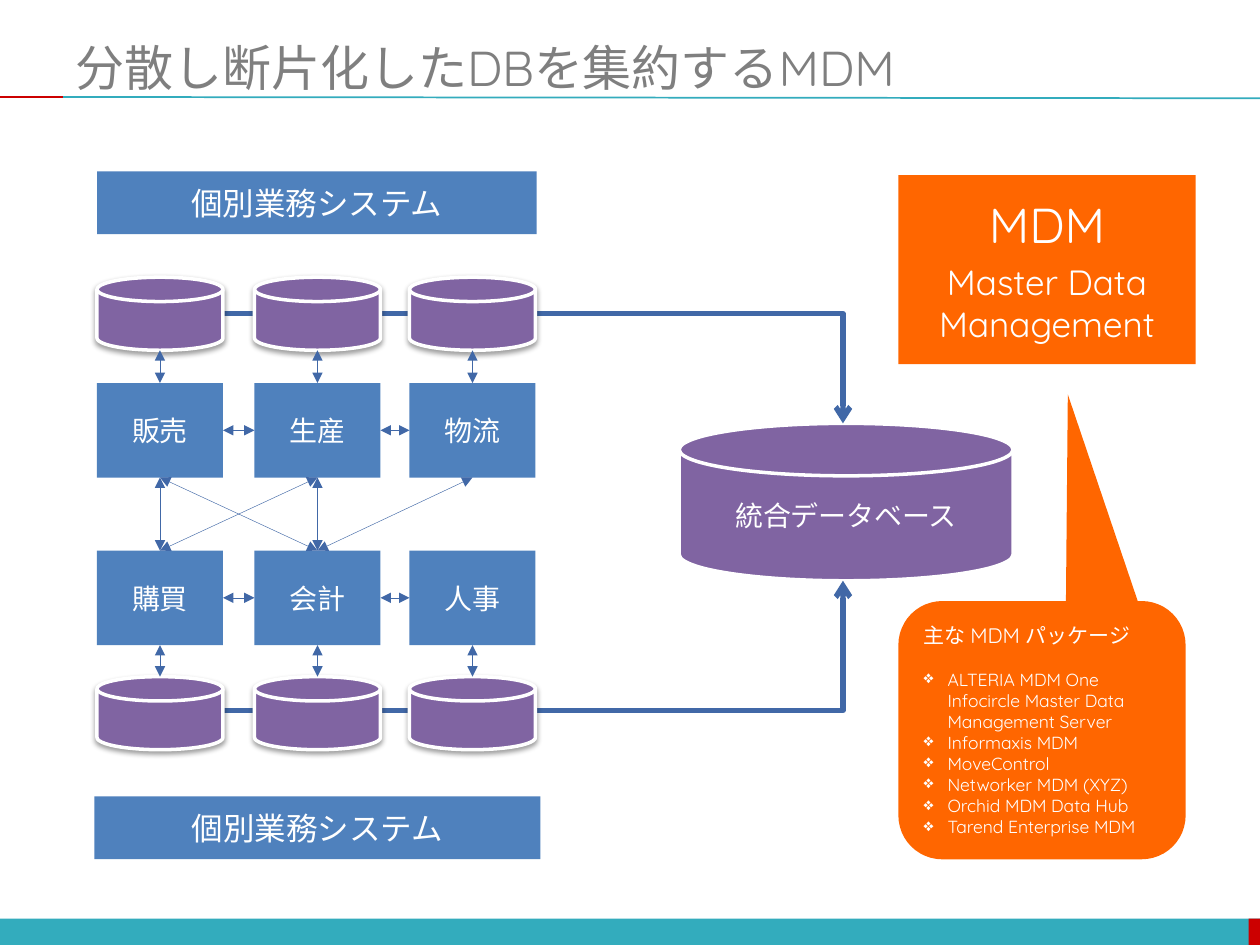
from typing import NamedTuple

from lxml import etree
from pptx import Presentation
from pptx.dml.color import RGBColor
from pptx.enum.shapes import MSO_CONNECTOR, MSO_SHAPE
from pptx.enum.text import MSO_ANCHOR, MSO_AUTO_SIZE, PP_ALIGN
from pptx.oxml.ns import qn
from pptx.util import Inches, Pt

RECT = MSO_SHAPE.RECTANGLE
DISK = MSO_SHAPE.FLOWCHART_MAGNETIC_DISK
CALLOUT = MSO_SHAPE.ROUNDED_RECTANGULAR_CALLOUT
STRAIGHT, ELBOW = MSO_CONNECTOR.STRAIGHT, MSO_CONNECTOR.ELBOW
LEFT, CENTER = PP_ALIGN.LEFT, PP_ALIGN.CENTER
MIDDLE = MSO_ANCHOR.MIDDLE
TITLE_ONLY = 5
FONT = "Quicksand"
COLORS = {
    "teal": "33ACBD", "red": "CC0000", "blue": "4F81BD", "arrow": "4168A7",
    "purple": "8064A2", "orange": "FF6600", "white": "FFFFFF",
    "title": "7F7F7F", "shadow": "000000",
}


class Box(NamedTuple):
    left: float
    top: float
    width: float
    height: float


class SystemRow(NamedTuple):
    names: tuple[str, ...]
    box_top: float
    disk_top: float


BOX_LEFTS = (0.77, 2.02, 3.25)
BOX_WIDTH, BOX_HEIGHT, DISK_HEIGHT = 1, 0.75, 0.58
CENTERS = [left + BOX_WIDTH / 2 for left in BOX_LEFTS]
UPPER = SystemRow(("販売", "生産", "物流"), 3.04, 2.2)
LOWER = SystemRow(("購買", "会計", "人事"), 4.37, 5.37)
CROSS_LINKS = ((0, 0), (0, 1), (1, 1), (1, 0), (2, 1))
DATABASE = Box(5.39, 3.36, 2.65, 1.25)
PACKAGES = (
    "ALTERIA MDM One Infocircle Master Data Management Server",
    "Informaxis MDM",
    "MoveControl",
    "Networker MDM (XYZ)",
    "Orchid MDM Data Hub",
    "Tarend Enterprise MDM",
)


def rgb(name: str) -> RGBColor:
    return RGBColor.from_string(COLORS[name])


def add_text(frame, text: str, *, size: float, color: str = "white", align=CENTER,
             before: float = 0, bullet: str = "", first: bool = True) -> None:
    """Write one paragraph; the first one fills the frame's existing paragraph."""
    paragraph = frame.paragraphs[0] if first else frame.add_paragraph()
    if bullet:
        props = paragraph._p.get_or_add_pPr()
        props.set("marL", str(Inches(0.19)))
        props.set("indent", str(Inches(-0.19)))
        etree.SubElement(props, qn("a:buChar"), char=bullet)
    paragraph.alignment = align
    if before:
        paragraph.space_before = Pt(before)
    run = paragraph.add_run()
    run.text = text
    run.font.name = FONT
    run.font.size = Pt(size)
    run.font.color.rgb = rgb(color)


def add_block(slide, kind, box: Box, fill: str, outline: str = ""):
    block = slide.shapes.add_shape(kind, *map(Inches, box))
    block.shadow.inherit = False
    block.fill.solid()
    block.fill.fore_color.rgb = rgb(fill)
    if outline:
        block.line.color.rgb = rgb(outline)
        block.line.width = Pt(2)
    else:
        block.line.fill.background()
    block.text_frame.word_wrap = True
    block.text_frame.vertical_anchor = MIDDLE
    return block


def add_label(slide, box: Box, text: str, size: float) -> None:
    add_text(add_block(slide, RECT, box, "blue").text_frame, text, size=size)


def add_line(slide, start: tuple[float, float], end: tuple[float, float], *,
             color: str = "arrow", width: float = 0.25, kind=STRAIGHT,
             head: str = "", tail: str = ""):
    line = slide.shapes.add_connector(kind, *map(Inches, (*start, *end)))
    line.line.color.rgb = rgb(color)
    line.line.width = Pt(width)
    outline = line.line._get_or_add_ln()
    for tag, arrow in (("a:headEnd", head), ("a:tailEnd", tail)):
        if arrow:
            etree.SubElement(outline, qn(tag), type=arrow)
    etree.SubElement(line._element.spPr, qn("a:effectLst"))
    return line


def add_link(slide, start: tuple[float, float], end: tuple[float, float]) -> None:
    add_line(slide, start, end, head="triangle", tail="triangle")


def add_feed(slide, y: float, database_edge: float) -> None:
    """Draw a thick arrow with a single bend from a disk row into the database."""
    feed = add_line(slide, (1.14, y), (6.69, database_edge), width=3,
                    kind=ELBOW, tail="arrow")
    feed._element.spPr.find(qn("a:prstGeom")).set("prst", "bentConnector2")


def add_disk_shadow(disk) -> None:
    effects = disk._element.spPr.find(qn("a:effectLst"))
    shadow = etree.SubElement(effects, qn("a:outerShdw"), blurRad=str(Pt(3.1)),
                              dist=str(Pt(1.6)), dir="5400000", rotWithShape="0")
    color = etree.SubElement(shadow, qn("a:srgbClr"), val=COLORS["shadow"])
    etree.SubElement(color, qn("a:alpha"), val="38000")


def add_system_row(slide, row: SystemRow) -> None:
    for left, name in zip(BOX_LEFTS, row.names):
        add_label(slide, Box(left, row.box_top, BOX_WIDTH, BOX_HEIGHT), name, 16)
        disk = Box(left, row.disk_top, BOX_WIDTH, DISK_HEIGHT)
        add_disk_shadow(add_block(slide, DISK, disk, "purple", "white"))

    if row.disk_top < row.box_top:
        gap = row.disk_top + DISK_HEIGHT, row.box_top
    else:
        gap = row.box_top + BOX_HEIGHT, row.disk_top
    for x in CENTERS:
        add_link(slide, (x, gap[0]), (x, gap[1]))

    middle = row.box_top + BOX_HEIGHT / 2
    for left, following in zip(BOX_LEFTS, BOX_LEFTS[1:]):
        add_link(slide, (left + BOX_WIDTH, middle), (following, middle))


def add_frame(slide) -> None:
    add_block(slide, RECT, Box(0, 7.29, 10, 0.21), "teal")
    add_block(slide, RECT, Box(9.91, 7.29, 0.09, 0.21), "red")
    add_line(slide, (0.5, 0.77), (10, 0.78), color="teal", width=1)
    add_line(slide, (0, 0.77), (0.5, 0.77), color="red", width=1)


def add_title(slide, text: str) -> None:
    title = slide.shapes.title
    title.left, title.top, title.width, title.height = map(Inches, (0.5, 0.3, 9.5, 0.46))
    title.text_frame.auto_size = MSO_AUTO_SIZE.NONE
    title.text_frame.vertical_anchor = MIDDLE
    add_text(title.text_frame, text, size=28, color="title", align=LEFT)


def add_mdm_notes(slide) -> None:
    heading = add_block(slide, RECT, Box(7.13, 1.39, 2.36, 1.5), "orange").text_frame
    add_text(heading, "MDM", size=28)
    add_text(heading, "Master Data Management", size=20, before=4, first=False)

    callout = add_block(slide, CALLOUT, Box(7.13, 4.77, 2.28, 2.05), "orange")
    for index, value in enumerate((0.09, -1.3, 0.17)):
        callout.adjustments[index] = value
    packages = callout.text_frame
    add_text(packages, "主な MDM パッケージ", size=12, align=LEFT)
    for index, package in enumerate(PACKAGES):
        add_text(packages, package, size=10, align=LEFT, bullet="❖",
                 before=0 if index else 12, first=False)


def main() -> None:
    deck = Presentation()
    deck.slide_width, deck.slide_height = Inches(10), Inches(7.5)
    slide = deck.slides.add_slide(deck.slide_layouts[TITLE_ONLY])

    add_frame(slide)
    add_title(slide, "分散し断片化したDBを集約するMDM")

    database = add_block(slide, DISK, DATABASE, "purple", "white")
    add_text(database.text_frame, "統合データベース", size=16)
    add_feed(slide, 5.64, DATABASE.top + DATABASE.height)
    add_feed(slide, 2.49, DATABASE.top)

    for row in (UPPER, LOWER):
        add_system_row(slide, row)
    for upper, lower in CROSS_LINKS:
        add_link(slide, (CENTERS[upper], UPPER.box_top + BOX_HEIGHT),
                 (CENTERS[lower], LOWER.box_top))

    for box in (Box(0.77, 1.36, 3.49, 0.5), Box(0.75, 6.32, 3.54, 0.5)):
        add_label(slide, box, "個別業務システム", 18)
    add_mdm_notes(slide)

    deck.save("out.pptx")


if __name__ == "__main__":
    main()
